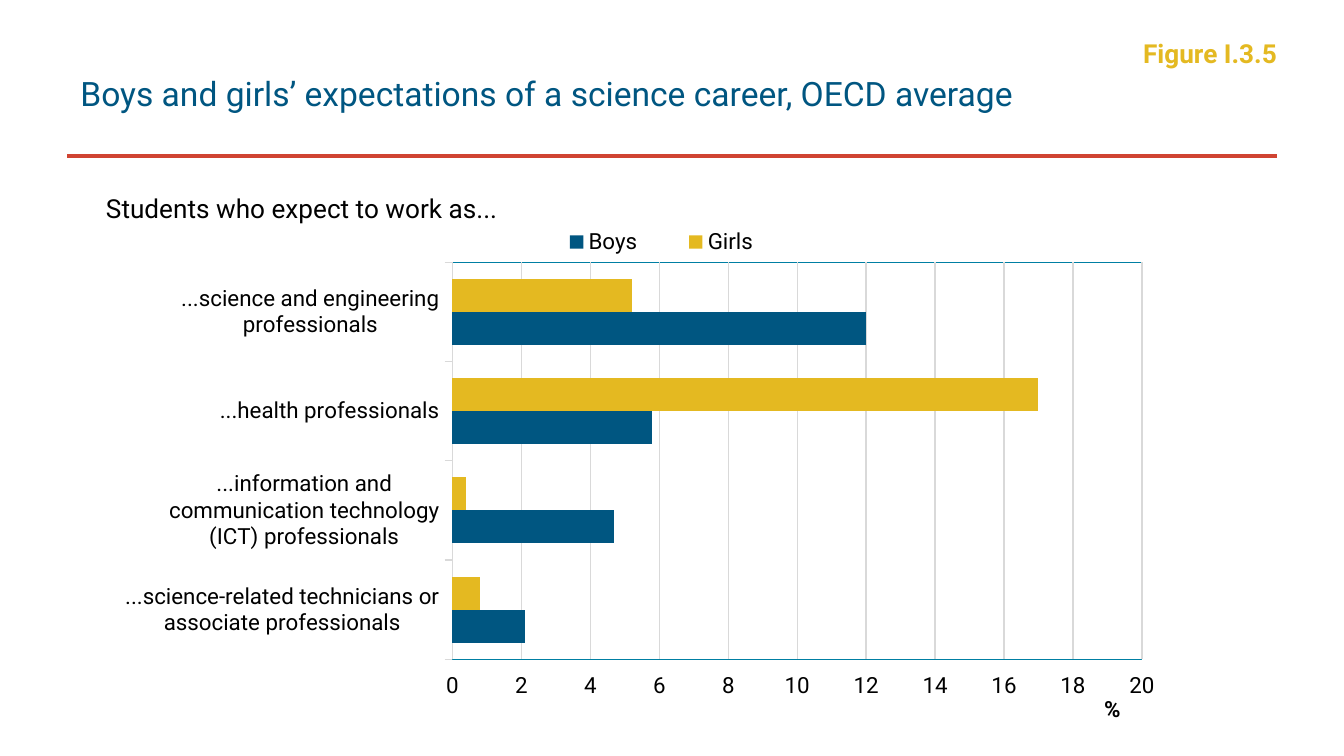
from lxml import etree
from pptx import Presentation
from pptx.chart.data import CategoryChartData
from pptx.dml.color import RGBColor
from pptx.enum.chart import (XL_CHART_TYPE, XL_LEGEND_POSITION, XL_TICK_LABEL_POSITION,
                             XL_TICK_MARK)
from pptx.enum.shapes import MSO_CONNECTOR
from pptx.enum.text import MSO_ANCHOR, PP_ALIGN
from pptx.oxml.ns import qn
from pptx.util import Pt

BAR = XL_CHART_TYPE.BAR_CLUSTERED
TOP_LEGEND = XL_LEGEND_POSITION.TOP
LABELS_HIGH = XL_TICK_LABEL_POSITION.HIGH
TICK_OUT, TICK_NONE = XL_TICK_MARK.OUTSIDE, XL_TICK_MARK.NONE
LEFT, RIGHT = PP_ALIGN.LEFT, PP_ALIGN.RIGHT
TOP, MIDDLE = MSO_ANCHOR.TOP, MSO_ANCHOR.MIDDLE
STRAIGHT = MSO_CONNECTOR.STRAIGHT

FONT = "Roboto"
BLUE, GOLD, RED = "005681", "E4B921", "D04432"
BLACK, GRID, FRAME = "000000", "D9D9D9", "007FA3"

CATEGORIES = [
    "...science and engineering professionals",
    "...health professionals",
    "...information and communication technology (ICT) professionals",
    "...science-related technicians or associate professionals",
]
SERIES = [
    ("Girls", (5.2, 17, 0.4, 0.8), GOLD),
    ("Boys", (12, 5.8, 4.7, 2.1), BLUE),
]


def rgb(color):
    return RGBColor.from_string(color)


def style_font(font, size, color, bold=False):
    font.name, font.size, font.bold = FONT, Pt(size), bold
    font.color.rgb = rgb(color)


def style_line(line, color, width):
    line.color.rgb = rgb(color)
    line.width = Pt(width)


def add_text(s, box, text, size, color, bold=False, align=LEFT, anchor=TOP):
    tf = s.shapes.add_textbox(*map(Pt, box)).text_frame
    tf.word_wrap = True
    tf.vertical_anchor = anchor
    p = tf.paragraphs[0]
    p.alignment = align
    r = p.add_run()
    r.text = text
    style_font(r.font, size, color, bold)


def add_header(s, box):
    x, y, w, h = box
    # Rule along the bottom of the header
    rule = s.shapes.add_connector(STRAIGHT, Pt(x), Pt(y + h), Pt(x + w), Pt(y + h))
    style_line(rule.line, RED, 2)
    etree.SubElement(rule._element.spPr, qn("a:effectLst"))
    # Title and figure number
    add_text(s, box, "Boys and girls’ expectations of a science career, OECD average",
             18, BLUE, anchor=MIDDLE)
    add_text(s, (x + w - 111.6, y, 118.8, 24.5), "Figure I.3.5", 14, GOLD,
             bold=True, align=RIGHT)


def set_layout(parent, before, inner=False, **fractions):
    """Place a chart part by fractions of the chart, ahead of the named element."""
    for old in parent.findall(qn("c:layout")):
        parent.remove(old)
    layout = etree.Element(qn("c:layout"))
    manual = etree.SubElement(layout, qn("c:manualLayout"))
    if inner:
        etree.SubElement(manual, qn("c:layoutTarget")).set("val", "inner")
    for axis in "xy":
        etree.SubElement(manual, qn(f"c:{axis}Mode")).set("val", "edge")
    for key, value in fractions.items():
        etree.SubElement(manual, qn(f"c:{key}")).set("val", str(value))
    parent.find(qn(before)).addprevious(layout)


def add_career_chart(s, box):
    data = CategoryChartData(number_format="0.0")
    data.categories = CATEGORIES
    for name, values, _ in SERIES:
        data.add_series(name, values)
    chart = s.shapes.add_chart(BAR, *map(Pt, box), data).chart
    chart.has_title = False
    style_font(chart.font, 12, BLACK)

    # Bars
    plot = chart.plots[0]
    plot.vary_by_categories = False
    plot.gap_width, plot.overlap = 100, 0
    for series, (_, _, color) in zip(plot.series, SERIES):
        series.format.fill.solid()
        series.format.fill.fore_color.rgb = rgb(color)

    # Category axis, first category on top
    cat = chart.category_axis
    cat.reverse_order = True
    cat.major_tick_mark = TICK_OUT
    style_line(cat.format.line, GRID, 0.75)

    # Value axis, labelled beside the last category at the bottom
    val = chart.value_axis
    val.minimum_scale, val.maximum_scale, val.major_unit = 0, 20, 2
    val.major_tick_mark = TICK_NONE
    val.tick_label_position = LABELS_HIGH
    val.tick_labels.number_format = "0"
    val.tick_labels.number_format_is_linked = False
    val.format.line.fill.background()
    style_line(val.major_gridlines.format.line, GRID, 0.75)
    r = val.axis_title.text_frame.paragraphs[0].add_run()
    r.text = "%"
    style_font(r.font, 12, BLACK, bold=True)

    # Legend
    chart.has_legend = True
    chart.legend.position = TOP_LEGEND
    chart.legend.include_in_layout = False
    style_font(chart.legend.font, 12, BLACK)

    # Positions inside the chart
    area = plot._element.getparent()
    set_layout(area, "c:barChart", inner=True, x=0.31, y=0.09, w=0.66, h=0.78)
    set_layout(chart.legend._element, "c:overlay", x=0.38, y=0.02, w=0.26, h=0.06)
    set_layout(val.axis_title._element, "c:overlay", x=0.93, y=0.93)

    # Thin frame around the plot
    sp_pr = etree.SubElement(area, qn("c:spPr"))
    etree.SubElement(sp_pr, qn("a:noFill"))
    ln = etree.SubElement(sp_pr, qn("a:ln"), w=str(Pt(0.5)))
    fill = etree.SubElement(ln, qn("a:solidFill"))
    etree.SubElement(fill, qn("a:srgbClr"), val=FRAME)


def main():
    prs = Presentation()
    prs.slide_width, prs.slide_height = Pt(720), Pt(405)
    s = prs.slides.add_slide(prs.slide_layouts[6])
    add_header(s, (36, 16.5, 648, 67))
    add_career_chart(s, (67, 116, 561.6, 275))
    add_text(s, (49.7, 99.5, 327.6, 24.5), "Students who expect to work as...", 14, BLACK)
    prs.save("out.pptx")


if __name__ == "__main__":
    main()
